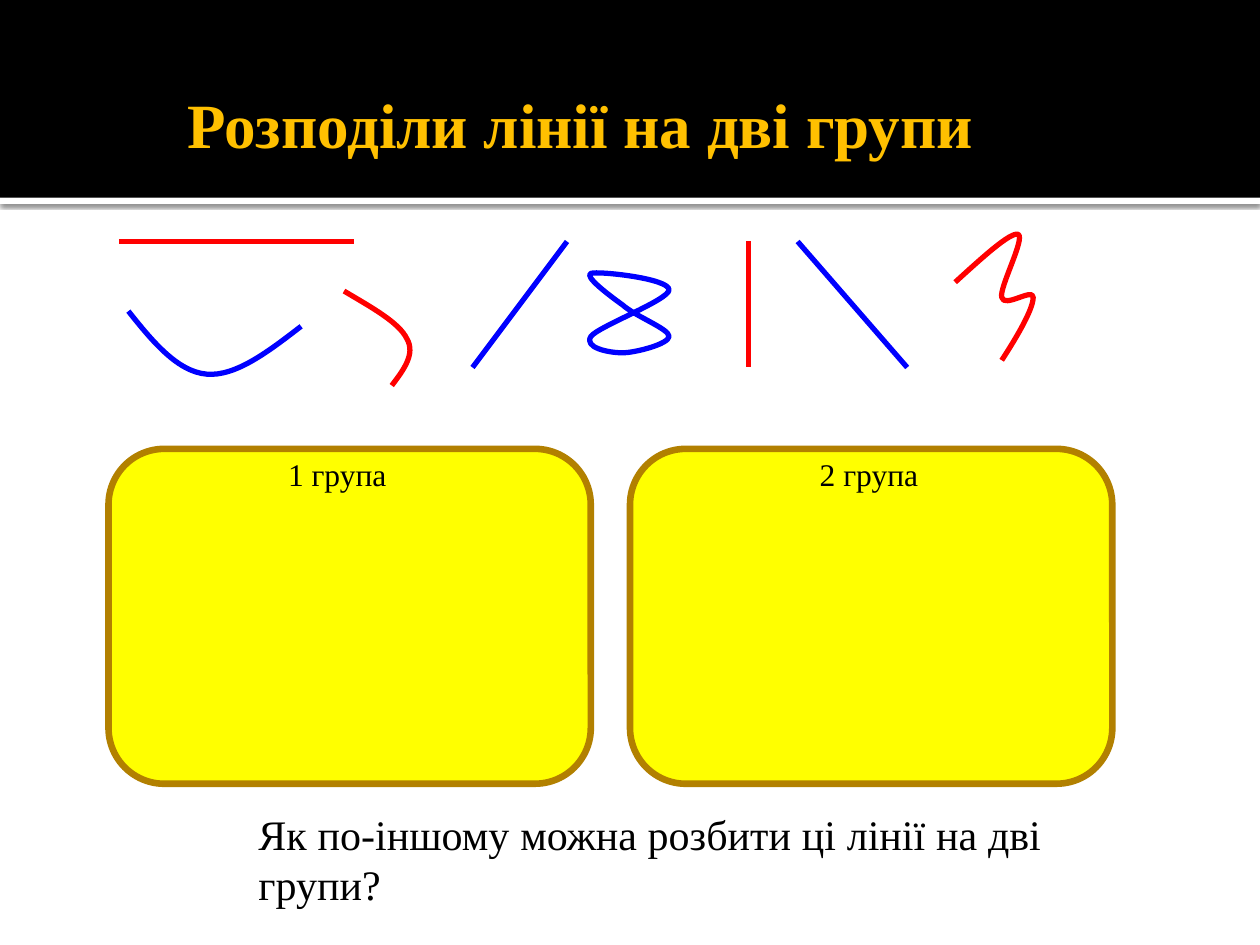
from lxml.etree import SubElement
from pptx import Presentation
from pptx.dml.color import RGBColor
from pptx.enum.shapes import MSO_CONNECTOR, MSO_SHAPE
from pptx.enum.text import MSO_ANCHOR, MSO_AUTO_SIZE, PP_ALIGN
from pptx.oxml.ns import qn
from pptx.util import Pt

BLACK = RGBColor(0x00, 0x00, 0x00)
WHITE = RGBColor(0xFF, 0xFF, 0xFF)
GOLD = RGBColor(0xFF, 0xC0, 0x00)
YELLOW = RGBColor(0xFF, 0xFF, 0x00)
BROWN = RGBColor(0xB2, 0x80, 0x00)
RED = RGBColor(0xFF, 0x00, 0x00)
BLUE = RGBColor(0x00, 0x00, 0xFF)
FONT = "Times New Roman"
LINE_WIDTH = 3

# Points are relative to the top left corner of the row of lines.
STRAIGHT_LINES = [
    (RED, (0, 6), (134.3, 6)),
    (BLUE, (202, 78), (256, 6)),
    (RED, (359.7, 6), (359.7, 78)),
    (BLUE, (450.4, 78), (387.8, 6)),
]
# A start point, then three points for each Bezier segment.
OPEN_CURVES = [
    (BLUE, [(5.4, 45.8), (19.1, 63.1), (33.5, 80.4), (50.1, 81.8),
            (66.6, 83.3), (85.4, 68.9), (104.1, 54.5)]),
    (RED, [(128.6, 34.3), (144.4, 43.7), (160.2, 52.3), (164.6, 61.7),
           (169.6, 70.3), (162.4, 79.7), (155.9, 88.3)]),
    (RED, [(477.8, 29.3), (493.6, 14.9), (509.4, 0.5), (513.8, 1.9),
           (518.1, 4.1), (503, 32.2), (504.4, 37.9),
           (505.8, 44.4), (522.4, 32.2), (522.4, 37.9),
           (522.4, 44.4), (513.8, 59.5), (504.4, 73.9)]),
]
FIGURE_EIGHT = [
    (287.7, 42.2), (279.8, 36.5), (265.4, 25.7), (269.7, 24.2),
    (274, 22.8), (314.3, 27.1), (314.3, 33.6),
    (314.3, 39.4), (274, 54.5), (269.7, 60.2),
    (265.4, 66.7), (279.8, 69.6), (287.7, 69.6),
    (294.9, 69.6), (314.3, 64.6), (314.3, 60.2),
    (314.3, 55.9), (294.9, 48.7), (287.7, 42.2),
]


def add_box(s, kind, left, top, width, height, fill):
    sp = s.shapes.add_shape(kind, Pt(left), Pt(top), Pt(width), Pt(height))
    sp.shadow.inherit = False
    sp.fill.solid()
    sp.fill.fore_color.rgb = fill
    sp.line.fill.background()
    return sp


def add_text(s, left, top, width, height, text, size, color=BLACK, bold=False,
             align=PP_ALIGN.LEFT, anchor=MSO_ANCHOR.TOP, wrap=True):
    sp = s.shapes.add_textbox(Pt(left), Pt(top), Pt(width), Pt(height))
    tf = sp.text_frame
    tf.word_wrap = wrap
    tf.vertical_anchor = anchor
    p = tf.paragraphs[0]
    p.alignment = align
    r = p.add_run()
    r.text = text
    r.font.name = FONT
    r.font.size = Pt(size)
    r.font.bold = bold
    r.font.color.rgb = color
    return tf


def add_shadow(sp):
    effects = sp._element.spPr.find(qn("a:effectLst"))
    shadow = SubElement(effects, qn("a:outerShdw"), blurRad=str(Pt(2.5)),
                        dist=str(Pt(0.8)), dir="5400000", rotWithShape="0")
    color = SubElement(shadow, qn("a:srgbClr"), val="000000")
    SubElement(color, qn("a:alpha"), val="60000")


def add_header(s, left, top, width, height):
    stripe = add_box(s, MSO_SHAPE.RECTANGLE, left, top + height, width, 3.6, WHITE)
    add_shadow(stripe)
    add_box(s, MSO_SHAPE.RECTANGLE, left, top, width, height, BLACK)
    tf = add_text(s, left + 36, top + 41.8, 588, 57, "Розподіли лінії на дві групи",
                  36, GOLD, True, PP_ALIGN.CENTER, MSO_ANCHOR.MIDDLE)
    tf.margin_right = Pt(3.6)


def add_straight(s, left, top, color, start, end):
    c = s.shapes.add_connector(
        MSO_CONNECTOR.STRAIGHT, Pt(left + start[0]), Pt(top + start[1]),
        Pt(left + end[0]), Pt(top + end[1]))
    c.line.color.rgb = color
    c.line.width = Pt(LINE_WIDTH)
    SubElement(c._element.spPr, qn("a:effectLst"))


def add_curve(s, left, top, color, points, close=False):
    """Build an outline through all points, then turn each three steps into a Bezier."""
    start, *rest = [(Pt(left + x), Pt(top + y)) for x, y in points]
    builder = s.shapes.build_freeform(*start)
    builder.add_line_segments(rest, close=close)
    sp = builder.convert_to_shape()
    steps = sp._element.xpath(".//a:lnTo")
    for i in range(0, len(rest), 3):
        curve = steps[i]
        for step in steps[i + 1:i + 3]:
            curve.append(step[0])
            step.getparent().remove(step)
        curve.tag = qn("a:cubicBezTo")
    sp.shadow.inherit = False
    sp.fill.background()
    sp.line.color.rgb = color
    sp.line.width = Pt(LINE_WIDTH)


def add_line_row(s, left, top):
    for color, start, end in STRAIGHT_LINES:
        add_straight(s, left, top, color, start, end)
    for color, points in OPEN_CURVES:
        add_curve(s, left, top, color, points)
    add_curve(s, left, top, BLUE, FIGURE_EIGHT, close=True)


def add_group(s, left, top, width, height, label, label_left):
    sp = add_box(s, MSO_SHAPE.ROUNDED_RECTANGLE, left, top, width, height, YELLOW)
    sp.line.color.rgb = BROWN
    sp.line.width = Pt(3.78)
    tf = add_text(s, left + label_left, top, 79, 29, label, 18, wrap=False)
    tf.auto_size = MSO_AUTO_SIZE.SHAPE_TO_FIT_TEXT


def add_question(s, left, top, width, height):
    tf = add_text(s, left, top, width, height,
                  "Як по-іншому можна розбити ці лінії на дві групи?", 24,
                  align=PP_ALIGN.JUSTIFY, anchor=MSO_ANCHOR.MIDDLE)
    tf.auto_size = MSO_AUTO_SIZE.SHAPE_TO_FIT_TEXT


def main():
    prs = Presentation()
    prs.slide_width, prs.slide_height = Pt(720), Pt(540)
    s = prs.slides.add_slide(prs.slide_layouts[6])
    add_header(s, 0, 0, 720, 113)
    add_line_row(s, 68, 132)
    add_group(s, 62, 256.5, 275.6, 191.4, "1 група", 95.5)
    add_group(s, 360, 256.5, 275.6, 191.4, "2 група", 101.3)
    add_question(s, 140.6, 458, 461.5, 65.4)
    prs.save("out.pptx")


if __name__ == "__main__":
    main()
